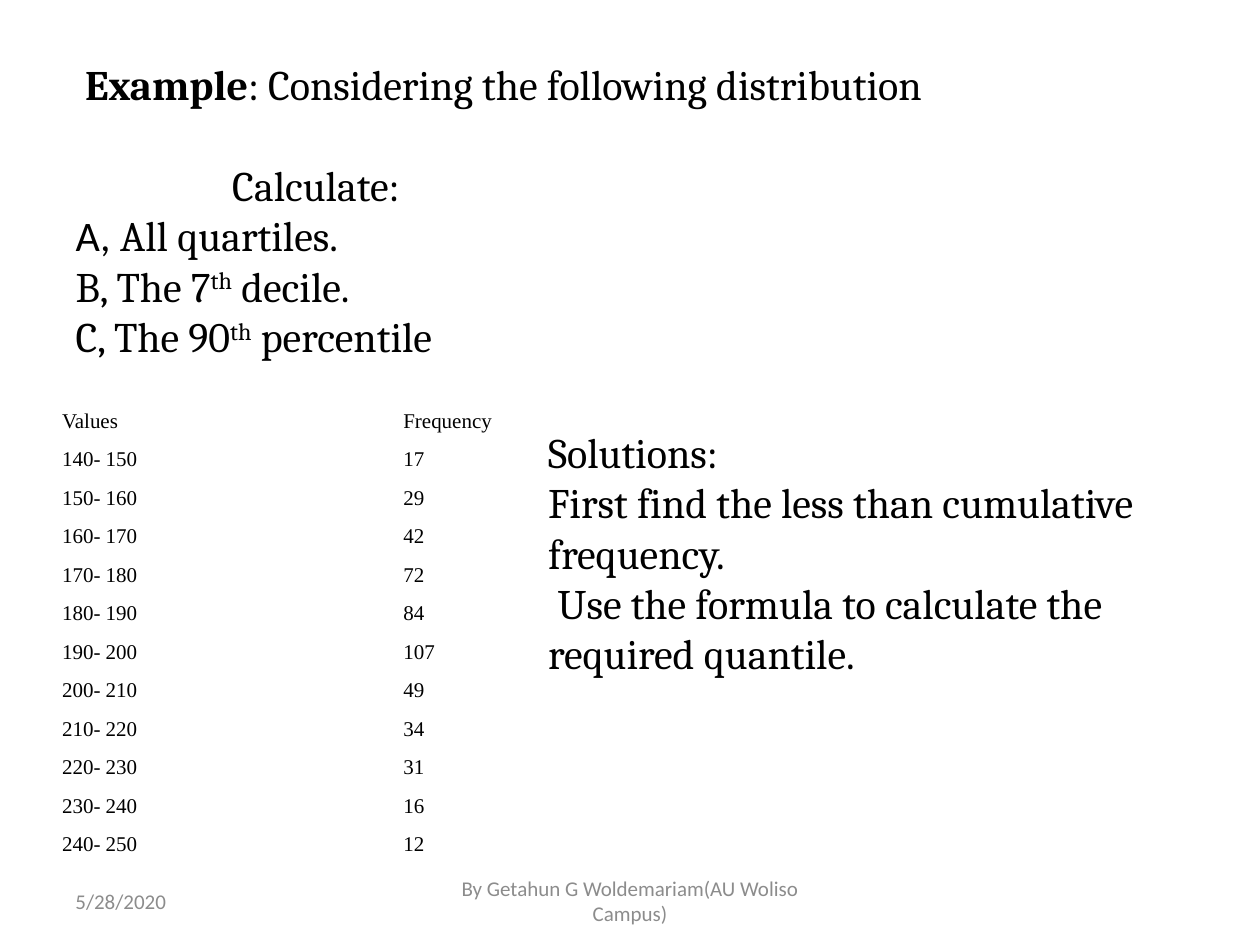
from lxml import etree
from pptx import Presentation
from pptx.dml.color import RGBColor
from pptx.enum import text
from pptx.oxml import ns
from pptx.util import Pt

BLACK, GREY = "000000", "8C8C8C"
CAMBRIA = {"name": "Cambria", "size": Pt(24), "bold": False}
TABLE = {"name": "Times New Roman", "size": Pt(12), "bold": False}
FOOTER = {"name": "Calibri", "size": Pt(12)}


def add_run(p, words, font, color=BLACK, baseline=0):
    r = p.add_run()
    r.text = words
    for key, value in font.items():
        setattr(r.font, key, value)
    r.font.color.rgb = RGBColor.from_string(color)
    if baseline:
        r.font._element.set("baseline", str(baseline * 1000))


def place(sp, left, top, width, height, anchor=text.MSO_ANCHOR.TOP):
    """Position a text shape and return its wrapped text frame."""
    sp.left, sp.top, sp.width, sp.height = map(Pt, (left, top, width, height))
    tf = sp.text_frame
    tf.word_wrap = True
    tf.auto_size = text.MSO_AUTO_SIZE.NONE
    tf.vertical_anchor = anchor
    return tf


prs = Presentation()
prs.slide_width, prs.slide_height = Pt(720), Pt(540)
s = prs.slides.add_slide(prs.slide_layouts.get_by_name("Two Content"))
title, tasks, solutions = s.placeholders

# Title
tf = place(title, 36, 30, 684, 40)
tf.margin_left = Pt(12.6)
p = tf.paragraphs[0]
p.alignment = text.PP_ALIGN.LEFT
add_run(p, "Example", {**CAMBRIA, "bold": True})
add_run(p, ": Considering the following distribution", CAMBRIA)

# Task and solution lists: each line is a first-line indent and its runs
# (words, font changes, superscript percent)
lists = [
    (tasks, (36, 87.5, 684, 124), [
        (89.5, [("Calculate:", {}, 0)]),
        (0, [("A, ", {"name": "Calibri"}, 0), ("All quartiles.", {}, 0)]),
        (0, [("B, The 7", {}, 0), ("th", {}, 30), (" decile.", {}, 0)]),
        (0, [("C, The 90", {}, 0), ("th", {}, 30), (" percentile", {}, 0)]),
    ]),
    (solutions, (306, 240, 414, 152.5), [
        (0, [("Solutions:", {}, 0)]),
        (0, [("First find the less than cumulative frequency.", {}, 0)]),
        (5.5, [("Use the formula to calculate the required quantile.", {}, 0)]),
    ]),
]
for sp, box, lines in lists:
    tf = place(sp, *box)
    for i, (indent, runs) in enumerate(lines):
        p = tf.add_paragraph() if i else tf.paragraphs[0]
        p.space_before = Pt(0)
        pPr = p._p.get_or_add_pPr()
        pPr.set("marL", "0")
        pPr.set("indent", str(Pt(indent)))
        etree.SubElement(pPr, ns.qn("a:buNone"))
        for words, changes, baseline in runs:
            add_run(p, words, {**CAMBRIA, **changes}, baseline=baseline)

# Frequency table with class intervals of width 10, without borders
frequencies = [17, 29, 42, 72, 84, 107, 49, 34, 31, 16, 12]
rows = [("Values", "Frequency")]
for i, frequency in enumerate(frequencies):
    low = 140 + 10 * i
    rows.append((f"{low}- {low + 10}", str(frequency)))
frame = s.shapes.add_table(len(rows), 2, Pt(30.5), Pt(234), Pt(342),
                           Pt(22 * len(rows)))
table = frame.table
table.first_row = table.horz_banding = False
# Plain "No Style, No Grid" table style
table._tbl.tblPr.find(ns.qn("a:tableStyleId")).text = (
    "{2D5ABB26-0587-4C30-8999-92F81FD0307C}")
for column, width in zip(table.columns, (195, 147)):
    column.width = Pt(width)
for row, values in zip(table.rows, rows):
    row.height = Pt(22)
    for cell, value in zip(row.cells, values):
        tcPr = cell._tc.get_or_add_tcPr()
        for side in ("lnL", "lnR", "lnT", "lnB"):
            border = etree.SubElement(tcPr, ns.qn(f"a:{side}"), w="0")
            etree.SubElement(border, ns.qn("a:noFill"))
        cell.fill.background()
        cell.margin_left = cell.margin_right = Pt(5)
        cell.margin_top = cell.margin_bottom = 0
        p = cell.text_frame.paragraphs[0]
        p.alignment = text.PP_ALIGN.JUSTIFY
        add_run(p, value, TABLE)

# Keep the table behind the solutions text it overlaps
solutions._element.addprevious(frame._element)

# Date and footer
footers = [
    ("5/28/2020", 36, 168, text.PP_ALIGN.LEFT),
    ("By Getahun G Woldemariam(AU Woliso Campus)", 246, 228,
     text.PP_ALIGN.CENTER),
]
for words, left, width, alignment in footers:
    sp = s.shapes.add_textbox(0, 0, 0, 0)
    tf = place(sp, left, 500.5, width, 28.75, text.MSO_ANCHOR.MIDDLE)
    p = tf.paragraphs[0]
    p.alignment = alignment
    add_run(p, words, FOOTER, GREY)

prs.save("out.pptx")
